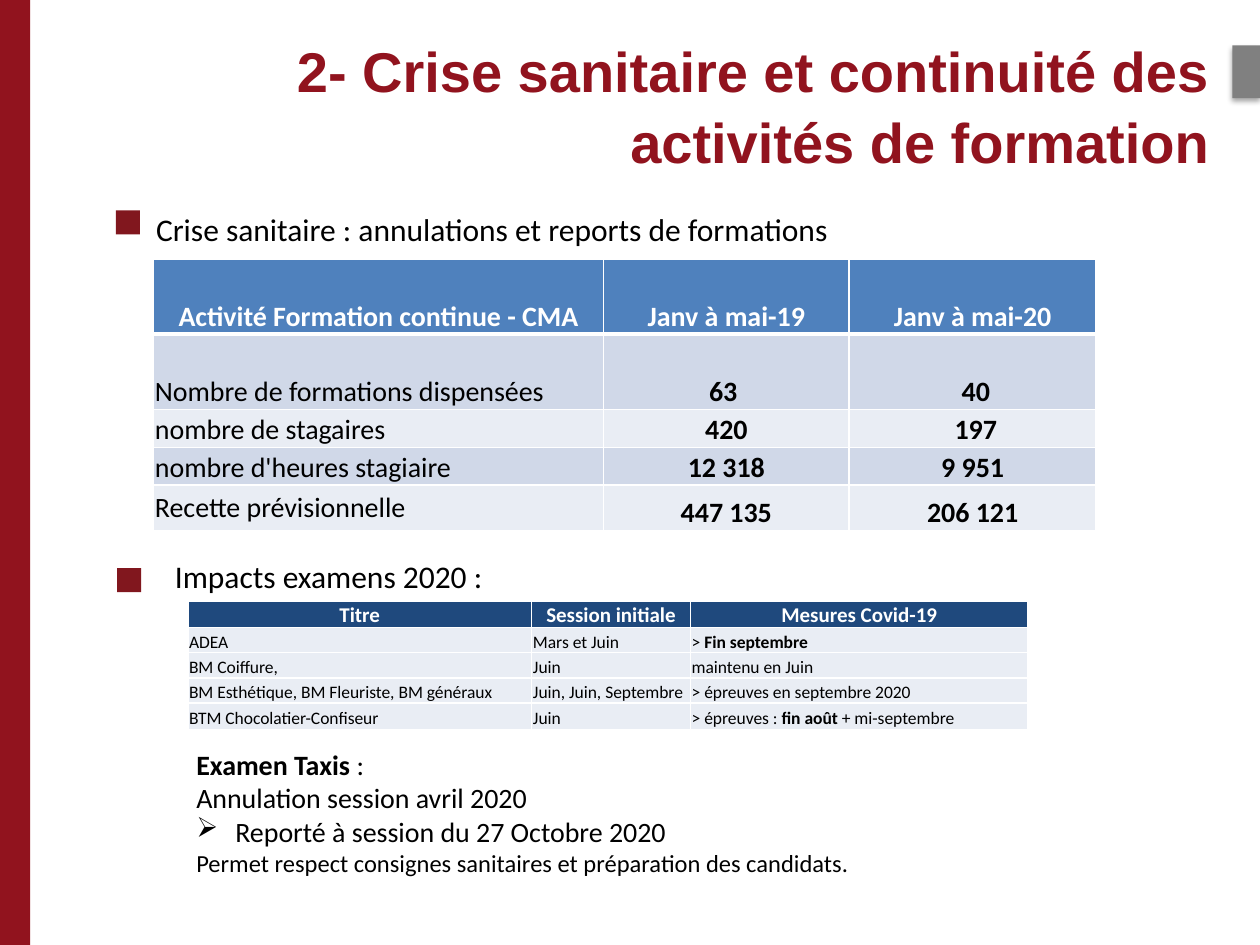
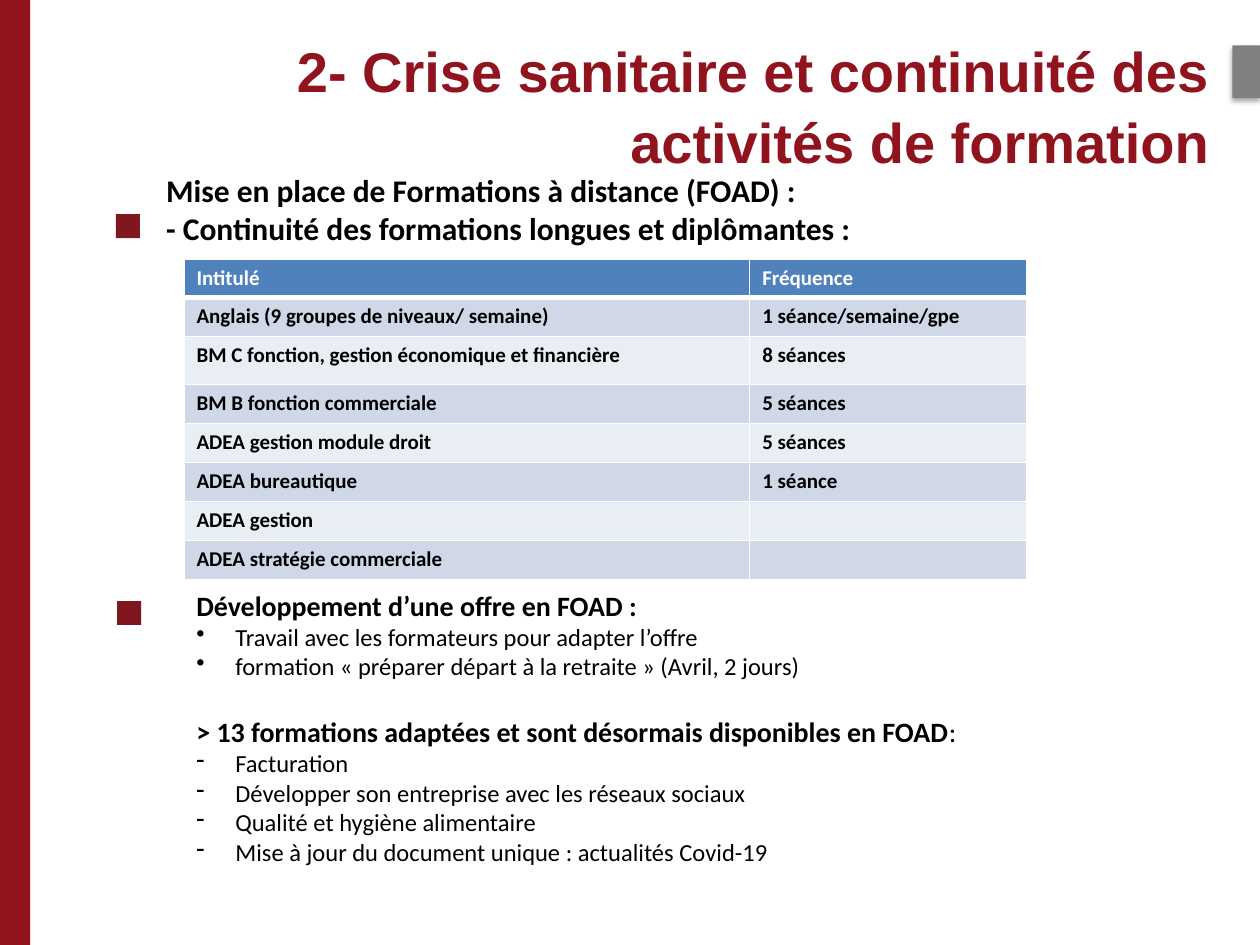
from lxml import etree
from pptx import Presentation
from pptx import util as u
from pptx.dml.color import RGBColor
from pptx.enum import shapes, text
from pptx.oxml import ns
from pptx.oxml import xmlchemy as xml

BAND, MARKER, GREY = "91131E", "81171E", "808080"
WHITE, BLACK = "FFFFFF", "000000"
BLUE, NAVY, LIGHT, PALE = "4F81BD", "1F497D", "D0D8E8", "E9EDF4"
TITLE = "2- Crise sanitaire et continuité des activités de formation"
HANG = 0.31
LEFT, CENTER, RIGHT = text.PP_ALIGN.LEFT, text.PP_ALIGN.CENTER, text.PP_ALIGN.RIGHT


def color(value):
    return RGBColor.from_string(value)


def child(parent, tag, **attributes):
    """Append a DrawingML element to parent."""
    element = etree.SubElement(parent, ns.qn(tag))
    for name, value in attributes.items():
        element.set(name, str(value))
    return element


def write(para, content, size=16, font="Calibri", fill=BLACK, bold=False,
          align=LEFT, bullet=None, before=0, spacing=None):
    """Fill a paragraph; text between ** marks is bold."""
    if bullet:
        properties = para._p.get_or_add_pPr()
        properties.set("marL", str(u.Inches(HANG)))
        properties.set("indent", str(-u.Inches(HANG)))
        child(properties, "a:buChar", char=bullet)
    para.alignment = align
    if before:
        para.space_before = u.Pt(before)
    if spacing:
        para.line_spacing = spacing
    if not content:
        child(para._p, "a:endParaRPr", sz=size * 100)
    for index, part in enumerate(content.split("**")):
        if part:
            span = para.add_run()
            span.text = part
            span.font.size = u.Pt(size)
            span.font.name = font
            span.font.bold = bold or index % 2 == 1
            span.font.color.rgb = color(fill)


def add_text(page, left, top, width, height, *paragraphs):
    """Add a text box; each paragraph is a (text, format) pair."""
    box = page.shapes.add_textbox(*map(u.Inches, (left, top, width, height)))
    frame = box.text_frame
    frame.word_wrap = True
    frame.auto_size = text.MSO_AUTO_SIZE.SHAPE_TO_FIT_TEXT
    for index, (content, style) in enumerate(paragraphs):
        para = frame.add_paragraph() if index else frame.paragraphs[0]
        write(para, content, **style)


def add_block(page, left, top, width, height, fill):
    block = page.shapes.add_shape(shapes.MSO_SHAPE.RECTANGLE,
                                  *map(u.Inches, (left, top, width, height)))
    block.shadow.inherit = False
    block.fill.solid()
    block.fill.fore_color.rgb = color(fill)
    block.line.fill.background()
    return block


def add_marker(page, left, top):
    add_block(page, left, top, 0.19, 0.19, MARKER)


def add_shadow(block):
    effects = block._element.spPr.find(ns.qn("a:effectLst"))
    shadow = child(effects, "a:outerShdw", blurRad=u.Pt(3.1), dist=u.Pt(1.8),
                   dir=5400000, rotWithShape=0)
    child(child(shadow, "a:srgbClr", val=BLACK), "a:alpha", val=35000)


def set_borders(cell, bottom):
    properties = cell._tc.get_or_add_tcPr()
    for side, width in (("L", 1), ("R", 1), ("T", 1), ("B", bottom)):
        line = child(properties, f"a:ln{side}", w=u.Pt(width))
        child(child(line, "a:solidFill"), "a:srgbClr", val=WHITE)


def add_table(page, left, top, widths, heights, rows, head, body, head_fill=BLUE,
              bands=(LIGHT, PALE), rule=3, tight=True, value_style=None):
    """Add a table; rule is the weight under the header, tight drops cell insets."""
    area = map(u.Inches, (left, top, sum(widths), sum(heights)))
    table = page.shapes.add_table(len(rows), len(widths), *area).table
    table.first_row = table.horz_banding = False
    for column, width in zip(table.columns, widths):
        column.width = u.Inches(width)
    for r, (height, values) in enumerate(zip(heights, rows)):
        table.rows[r].height = u.Inches(height)
        for c, value in enumerate(values):
            cell = table.cell(r, c)
            set_borders(cell, 1 if r else rule)
            cell.fill.solid()
            cell.fill.fore_color.rgb = color(bands[(r - 1) % len(bands)] if r else head_fill)
            if tight:
                cell.margin_left = cell.margin_right = cell.margin_top = u.Inches(0.01)
                cell.margin_bottom = 0
                cell.vertical_anchor = text.MSO_ANCHOR.BOTTOM
            style = (value_style if c and value_style else body) if r else head
            write(cell.text_frame.paragraphs[0], value, **style)
    return table


def add_page(deck):
    """Add a slide with the side band, title and grey tab."""
    page = deck.slides.add_slide(deck.slide_layouts[6])
    add_block(page, 0, 0, 0.24, 7.5, BAND)
    add_text(page, 0.51, 0.21, 9.19, 1.18,
             (TITLE, dict(size=32, font="Arial", fill=BAND, bold=True,
                          align=RIGHT, spacing=1.06)))
    add_shadow(add_block(page, 9.78, 0.36, 0.22, 0.42, GREY))
    return page


def build_crisis_page(deck):
    page = add_page(deck)
    add_marker(page, 0.92, 1.67)
    add_marker(page, 0.93, 4.51)
    add_text(page, 1.14, 1.62, 7.64, 0.4,
             ("Crise sanitaire : annulations et reports de formations", dict(size=18)))
    activity = add_table(
        page, 1.22, 2.06, (3.57, 1.95, 1.96), (0.59, 0.6, 0.3, 0.3, 0.36),
        [("Activité Formation continue - CMA", "Janv à mai-19", "Janv à mai-20"),
         ("Nombre de formations dispensées", "63 ", " 40"),
         ("nombre de stagaires", "420", " 197"),
         ("nombre d'heures stagiaire", "12 318", "9 951"),
         ("Recette prévisionnelle", "447 135", "206 121")],
        head=dict(fill=WHITE, bold=True, align=CENTER), body={},
        value_style=dict(bold=True, align=CENTER))
    activity.cell(4, 0).vertical_anchor = text.MSO_ANCHOR.MIDDLE

    add_text(page, 1.29, 4.37, 7.64, 0.4, ("Impacts examens 2020 :", dict(size=18)))
    add_table(
        page, 1.49, 4.77, (2.73, 1.26, 2.68), (0.2, 0.2, 0.2, 0.2, 0.21),
        [("Titre", "Session initiale", "Mesures Covid-19"),
         ("ADEA", "Mars et Juin", "> **Fin septembre**"),
         ("BM Coiffure,", "Juin", "maintenu en Juin"),
         ("BM Esthétique, BM Fleuriste, BM généraux", "Juin, Juin, Septembre",
          "> épreuves en septembre 2020"),
         ("BTM Chocolatier-Confiseur", "Juin", "> épreuves : **fin août **+ mi-septembre")],
        head=dict(size=12, fill=WHITE, bold=True, align=CENTER), body=dict(size=10),
        head_fill=NAVY, bands=(PALE,), rule=1)
    add_text(page, 1.46, 5.88, 7.64, 1.18,
             ("**Examen Taxis** :", {}),
             ("Annulation session avril 2020", {}),
             ("Reporté à session du 27 Octobre 2020", dict(bullet="➢")),
             ("Permet respect consignes sanitaires et préparation des candidats.",
              dict(size=14)))


def build_distance_page(deck):
    page = add_page(deck)
    add_marker(page, 0.92, 1.7)
    add_marker(page, 0.93, 4.77)
    heading = dict(size=18, bold=True)
    add_text(page, 1.22, 1.31, 7.64, 0.71,
             ("Mise en place de Formations à distance (FOAD) :", heading),
             ("- Continuité des formations longues et diplômantes :", heading))
    add_table(
        page, 1.46, 2.06, (4.49, 2.2), (0.3, 0.31, 0.38) + (0.31,) * 5,
        [("Intitulé", "Fréquence"),
         ("Anglais (9 groupes de niveaux/ semaine)", "1 séance/semaine/gpe"),
         ("BM C fonction, gestion économique et financière", "8 séances"),
         ("BM B fonction commerciale", "5 séances"),
         ("ADEA gestion module droit", "5 séances"),
         ("ADEA bureautique", "1 séance"),
         ("ADEA gestion", ""),
         ("ADEA stratégie commerciale", "")],
        head=dict(size=12, fill=WHITE, bold=True), body=dict(size=12, bold=True),
        tight=False)
    point, dash = dict(size=14, bullet="•"), dict(size=14, bullet="-")
    add_text(page, 1.46, 4.62, 7.59, 2.44,
             ("Développement d’une offre en FOAD :", dict(bold=True)),
             ("Travail avec les formateurs pour adapter l’offre", point),
             ("formation « préparer départ à la retraite » (Avril, 2 jours)", point),
             ("**> 13 formations adaptées et sont désormais disponibles en FOAD**:",
              dict(before=19.5)),
             ("Facturation", dash),
             ("Développer son entreprise avec les réseaux sociaux", dash),
             ("Qualité et hygiène alimentaire", dash),
             ("Mise à jour du document unique : actualités Covid-19", dash))


def main():
    deck = Presentation()
    deck.slide_width, deck.slide_height = u.Inches(10), u.Inches(7.5)
    build_crisis_page(deck)
    build_distance_page(deck)
    deck.save("out.pptx")


if __name__ == "__main__":
    main()
